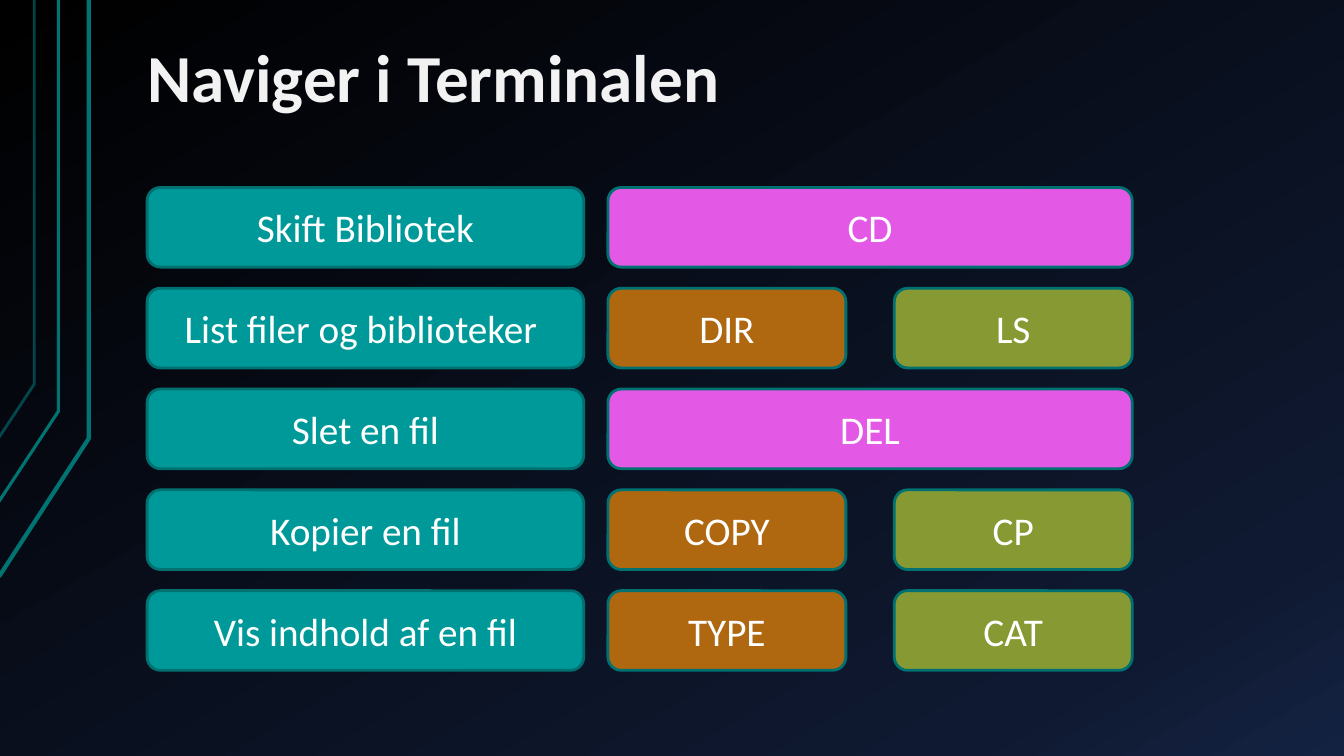
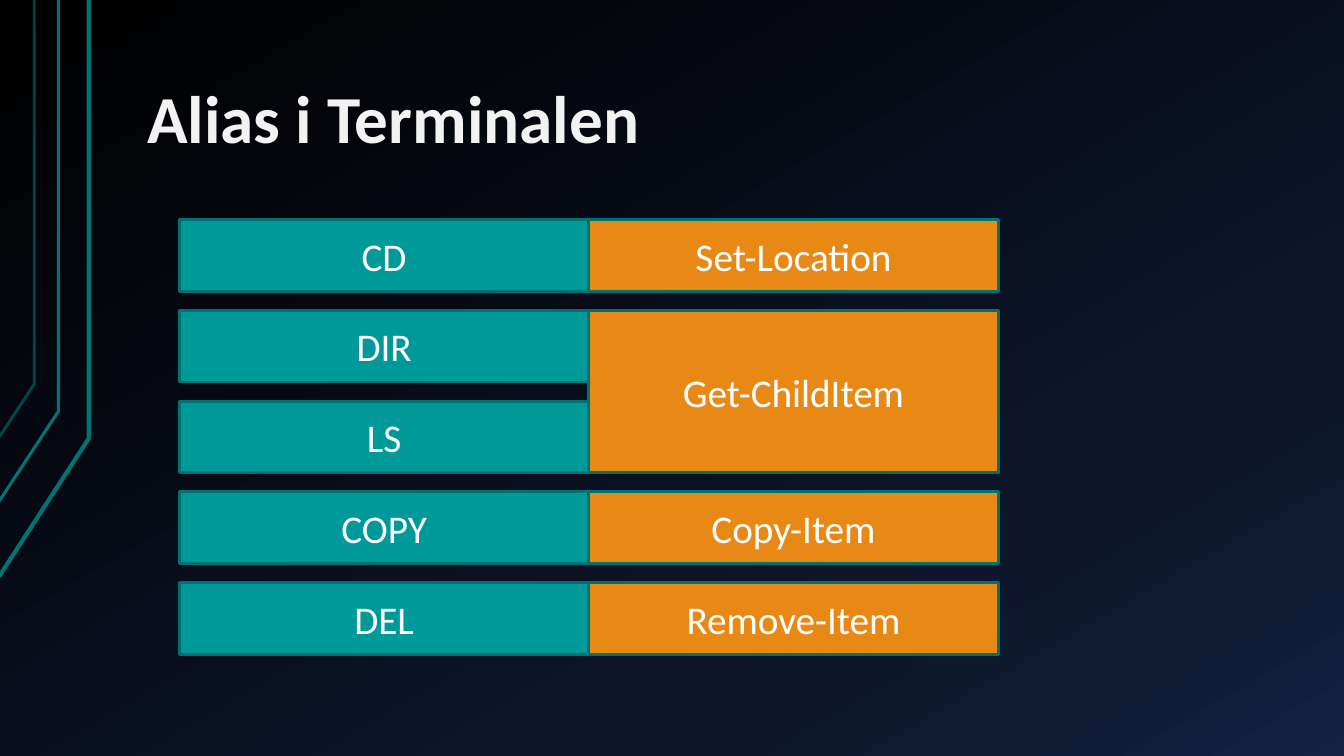
from copy import deepcopy

from lxml.etree import SubElement
from pptx import Presentation
from pptx.dml.color import RGBColor
from pptx.enum.shapes import MSO_SHAPE
from pptx.enum.text import MSO_ANCHOR, PP_ALIGN
from pptx.oxml.ns import qn
from pptx.util import Inches, Pt

FONT = "Calibri"
WHITE, TITLE = "FFFFFF", "F2F2F2"
TEAL, EDGE, TRACE = "009999", "007171", "007373"
PINK, BROWN, OLIVE, ORANGE = "E359E6", "AF6710", "879933", "E98915"
BACKGROUND = [(0, "000000"), (0.85, "0F1931"), (1, "142242")]
# points from the left edge up to the top, line width, opacity in percent
TRACES = [
    ([(-0.01, 5.72), (0.88, 4.35), (0.88, 0)], 3, 100),
    ([(-0.02, 4.99), (0.58, 4.08), (0.58, 0)], 2.25, 100),
    ([(-0.01, 4.34), (0.34, 3.81), (0.34, 0)], 2, 60),
]

# (task, commands): one command spans both columns
COMMANDS = [
    ("Skift Bibliotek", ["CD"]),
    ("List filer og biblioteker ", ["DIR", "LS"]),
    ("Slet en fil", ["DEL"]),
    ("Kopier en fil", ["COPY", "CP"]),
    ("Vis indhold af en fil", ["TYPE", "CAT"]),
]
# (aliases, command): the command spans the rows of its aliases
ALIASES = [
    (["CD"], "Set-Location"),
    (["DIR", "LS"], "Get-ChildItem"),
    (["COPY"], "Copy-Item"),
    (["DEL"], "Remove-Item"),
]


def rgb(value):
    return RGBColor.from_string(value)


def write(tf, text, size=28, color=WHITE, bold=False, align=PP_ALIGN.CENTER,
          anchor=MSO_ANCHOR.MIDDLE, spacing=1.0):
    tf.word_wrap = True
    tf.vertical_anchor = anchor
    p = tf.paragraphs[0]
    p.alignment, p.line_spacing = align, spacing
    r = p.add_run()
    r.text = text
    r.font.name, r.font.size, r.font.bold = FONT, Pt(size), bold
    r.font.color.rgb = rgb(color)


def set_background(master):
    fill = master.background.fill
    fill.gradient()
    fill.gradient_angle = 300
    stops = master.element.find(".//" + qn("p:bg")).find(".//" + qn("a:gsLst"))
    stops.append(deepcopy(stops[-1]))
    for stop, (position, color) in zip(fill.gradient_stops, BACKGROUND):
        stop.position = position
        stop.color.rgb = rgb(color)


def add_trace(s, points, width, opacity):
    start, *rest = [(Inches(x), Inches(y)) for x, y in points]
    builder = s.shapes.build_freeform(*start)
    builder.add_line_segments(rest, close=False)
    sp = builder.convert_to_shape()
    sp.shadow.inherit = False
    sp.fill.background()
    sp.line.color.rgb = rgb(TRACE)
    sp.line.width = Pt(width)
    color = sp.element.find(".//" + qn("a:ln")).find(".//" + qn("a:srgbClr"))
    SubElement(color, qn("a:alpha"), val=str(opacity * 1000))


def add_slide(prs, title, title_height):
    s = prs.slides.add_slide(prs.slide_layouts[6])
    for trace in TRACES:
        add_trace(s, *trace)
    box = s.shapes.add_textbox(Inches(1.33), Inches(0.3), Inches(11.33), Inches(title_height))
    tf = box.text_frame
    tf.margin_left = tf.margin_right = Inches(0.13)
    tf.margin_top = tf.margin_bottom = Inches(0.07)
    write(tf, title, size=48, color=TITLE, bold=True, align=PP_ALIGN.LEFT,
          anchor=MSO_ANCHOR.BOTTOM, spacing=0.9)
    return s


def add_box(s, text, left, top, width, height, fill, kind=MSO_SHAPE.RECTANGLE):
    sp = s.shapes.add_shape(kind, Inches(left), Inches(top), Inches(width), Inches(height))
    sp.shadow.inherit = False
    sp.fill.solid()
    sp.fill.fore_color.rgb = rgb(fill)
    sp.line.color.rgb = rgb(EDGE)
    sp.line.width = Pt(2)
    write(sp.text_frame, text)


def add_commands(s):
    top, pitch, height = 1.86, 1.0, 0.79
    left, width, gap = 6.03, 2.36, 0.48
    rounded = MSO_SHAPE.ROUNDED_RECTANGLE
    for row, (task, commands) in enumerate(COMMANDS):
        y = top + row * pitch
        add_box(s, task, 1.46, y, 4.33, height, TEAL, rounded)
        if len(commands) == 1:
            add_box(s, commands[0], left, y, 2 * width + gap, height, PINK, rounded)
            continue
        for col, (command, fill) in enumerate(zip(commands, (BROWN, OLIVE))):
            add_box(s, command, left + col * (width + gap), y, width, height, fill, rounded)


def add_aliases(s):
    left, width = 1.78, 4.06
    top, pitch, height = 2.18, 0.9, 0.71
    row = 0
    for aliases, command in ALIASES:
        first = top + row * pitch
        for i, alias in enumerate(aliases):
            add_box(s, alias, left, first + i * pitch, width, height, TEAL)
        span = height + (len(aliases) - 1) * pitch
        add_box(s, command, left + width, first, width, span, ORANGE)
        row += len(aliases)


def main():
    prs = Presentation()
    prs.slide_width, prs.slide_height = Inches(13.33), Inches(7.5)
    set_background(prs.slide_master)
    add_commands(add_slide(prs, "Naviger i Terminalen", 0.93))
    add_aliases(add_slide(prs, "Alias i Terminalen", 1.34))
    prs.save("out.pptx")


if __name__ == "__main__":
    main()
